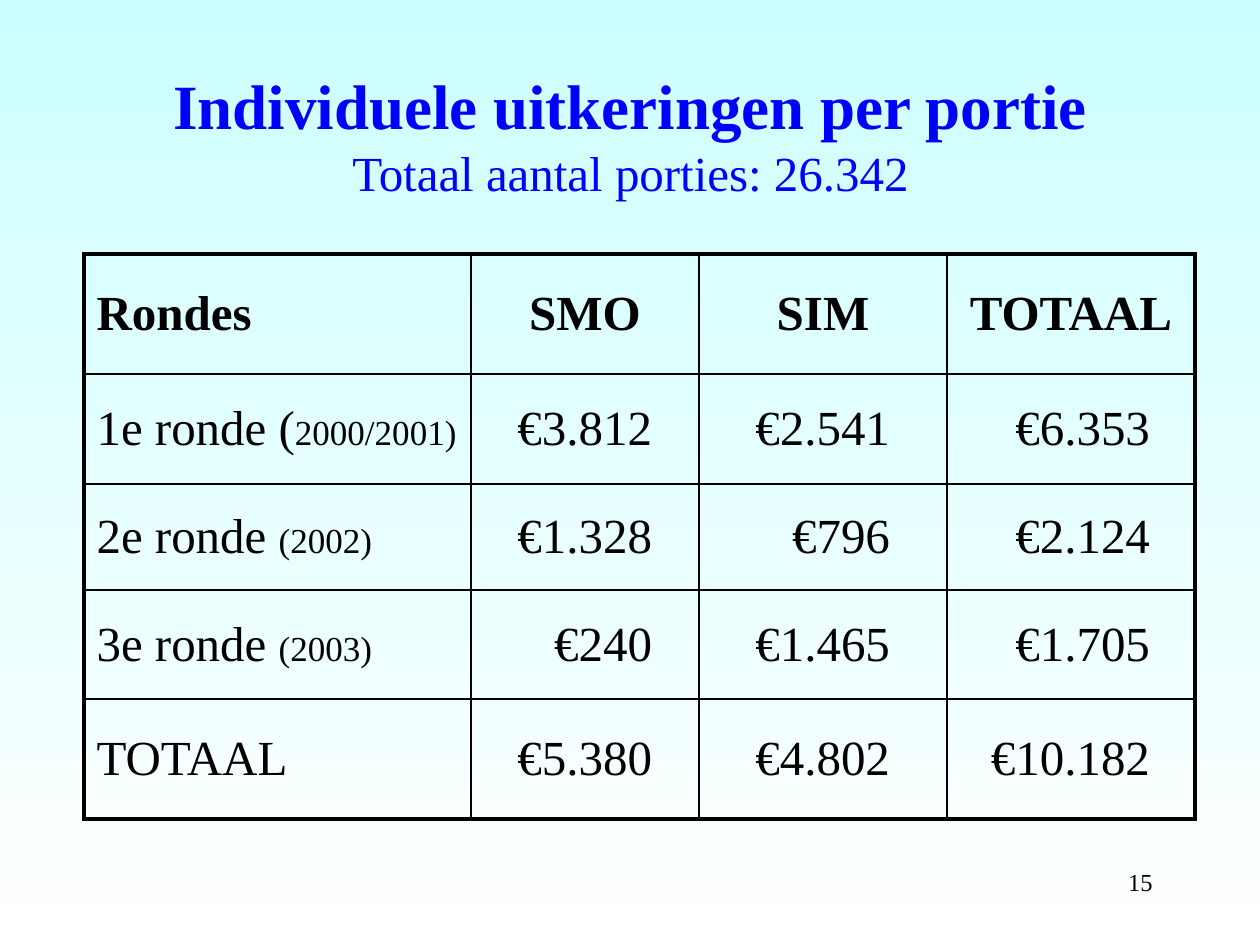
import pptx
import pptx.dml.color
import pptx.enum.text
import pptx.oxml
import pptx.oxml.ns
import pptx.util

PX = 914400 // 126
FONT = "Times New Roman"
BLACK = pptx.dml.color.RGBColor(0x00, 0x00, 0x00)
BLUE = pptx.dml.color.RGBColor(0x00, 0x00, 0xFF)
CYAN = pptx.dml.color.RGBColor(0xCC, 0xFF, 0xFF)
WHITE = pptx.dml.color.RGBColor(0xFF, 0xFF, 0xFF)
ALIGN = pptx.enum.text.PP_ALIGN
MIDDLE = pptx.enum.text.MSO_ANCHOR.MIDDLE


def style(r, size, color=BLACK, bold=False):
    r.font.name = FONT
    r.font.size = pptx.util.Pt(size)
    r.font.bold = bold
    r.font.color.rgb = color


def add_border(cell, side, width):
    ln = pptx.oxml.parse_xml(
        f'<a:{side} {pptx.oxml.ns.nsdecls("a")} w="{pptx.util.Pt(width)}">'
        f'<a:solidFill><a:srgbClr val="{BLACK}"/></a:solidFill></a:{side}>')
    cell.fill.background()
    tcPr = cell._tc.get_or_add_tcPr()
    # Border lines must come before the fill
    tcPr.insert(len(tcPr) - 1, ln)


prs = pptx.Presentation()
prs.slide_width = 1260 * PX
prs.slide_height = 945 * PX
s = prs.slides.add_slide(prs.slide_layouts[5])

# Background: cyan at the top to white at the bottom
fill = s.background.fill
fill.gradient()
fill.gradient_angle = 270
for stop, color in zip(fill.gradient_stops, (CYAN, WHITE)):
    stop.color.rgb = color

# Title
title = s.shapes.title
title.left, title.top, title.width, title.height = [
    v * PX for v in (95, 55, 1071, 158)]
tf = title.text_frame
tf.auto_size = pptx.enum.text.MSO_AUTO_SIZE.NONE
tf.vertical_anchor = MIDDLE
tf.text = "Individuele uitkeringen per portie\nTotaal aantal porties: 26.342"
for p, size, bold in zip(tf.paragraphs, (36, 28), (True, False)):
    p.alignment = ALIGN.CENTER
    style(p.runs[0], size, BLUE, bold)

# Table of payments: the label is followed by a smaller year
rows = [
    (("Rondes", ""), "SMO", "SIM", "TOTAAL"),
    (("1e ronde (", "2000/2001)"), "€3.812", "€2.541", "€6.353"),
    (("2e ronde ", "(2002)"), "€1.328", "€796", "€2.124"),
    (("3e ronde ", "(2003)"), "€240", "€1.465", "€1.705"),
    (("TOTAAL", ""), "€5.380", "€4.802", "€10.182"),
]
col_widths = [387, 228, 248, 248]
row_heights = [120, 110, 106, 109, 120]
amount_margins = [6, 47, 57, 45]
last_row, last_col = len(rows) - 1, len(col_widths) - 1

table = s.shapes.add_table(
    len(rows), len(col_widths), 84 * PX, 254 * PX,
    sum(col_widths) * PX, sum(row_heights) * PX).table
table.first_row = False
table.horz_banding = False
for col, width in zip(table.columns, col_widths):
    col.width = width * PX
for row, height in zip(table.rows, row_heights):
    row.height = height * PX

for i, row in enumerate(rows):
    for j, value in enumerate(row):
        cell = table.cell(i, j)
        cell.vertical_anchor = MIDDLE
        p = cell.text_frame.paragraphs[0]
        if j == 0:
            label, year = value
            p.text = label
            p.alignment = ALIGN.LEFT
            if year:
                r = p.add_run()
                r.text = year
                style(r, 20)
        else:
            p.text = value
            p.alignment = ALIGN.RIGHT if i else ALIGN.CENTER
        if i or j == 0:
            cell.margin_right = amount_margins[j] * PX
        style(p.runs[0], 28, bold=i == 0)

        # Thick outer frame, thin inner grid
        for side, outer in (("lnL", j == 0), ("lnR", j == last_col),
                            ("lnT", i == 0), ("lnB", i == last_row)):
            add_border(cell, side, 2.25 if outer else 1)

# Slide number
sp = s.shapes.add_textbox(903 * PX, 861 * PX, 262 * PX, 63 * PX)
tf = sp.text_frame
tf.word_wrap = True
tf.text = "15"
p = tf.paragraphs[0]
p.alignment = ALIGN.RIGHT
style(p.runs[0], 14)

prs.save("out.pptx")
